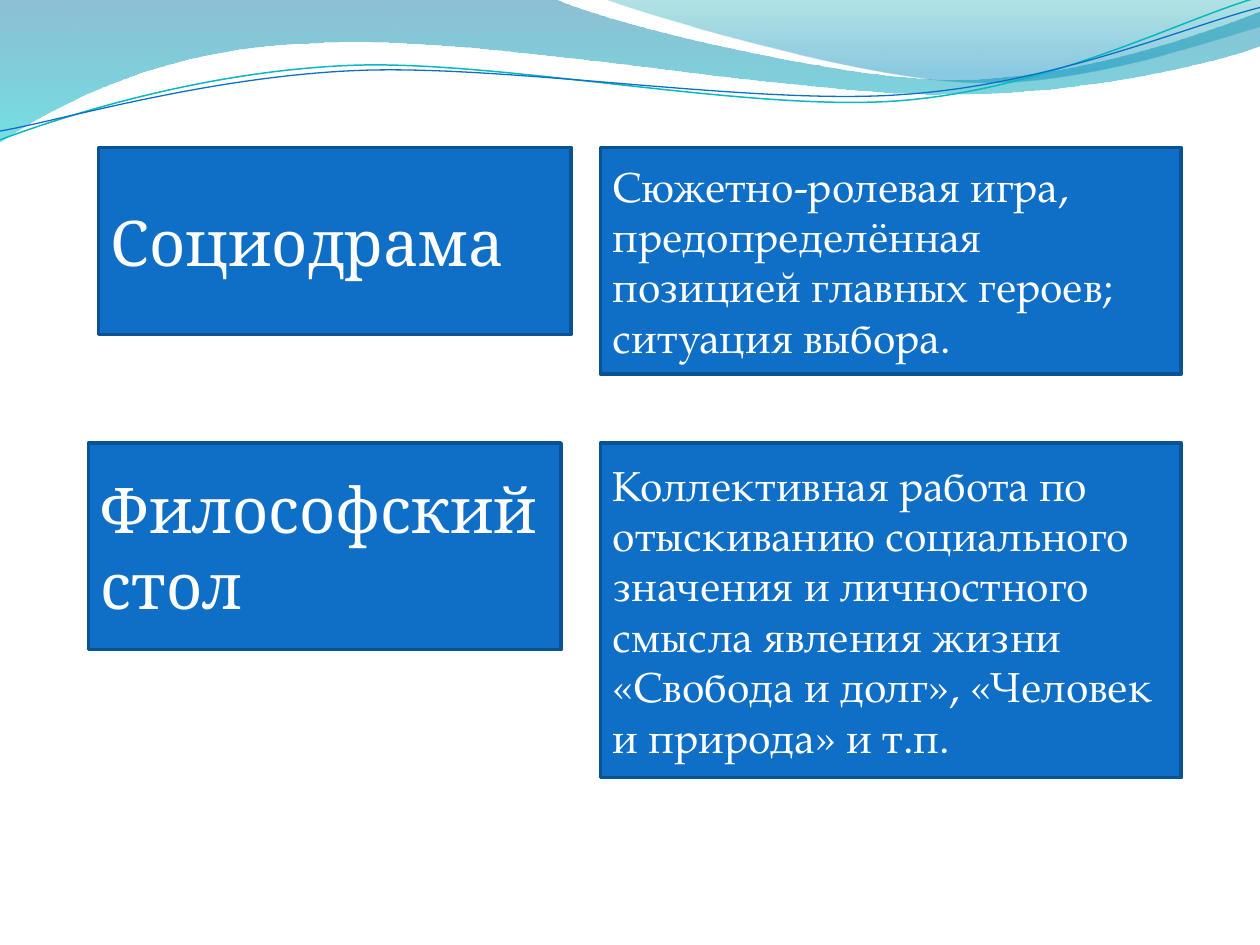
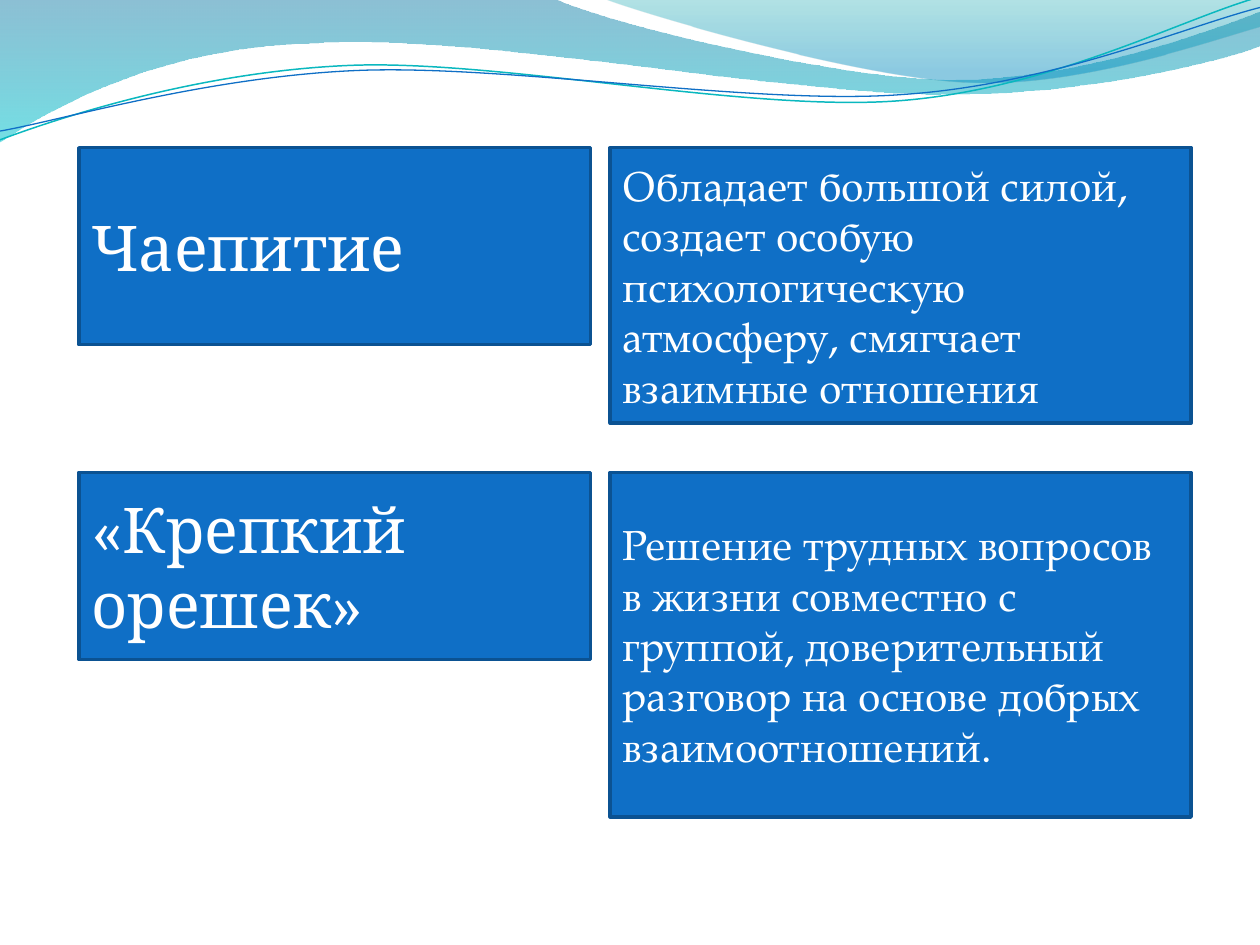
import math
from dataclasses import dataclass

from lxml import etree
from pptx import Presentation
from pptx.dml.color import RGBColor
from pptx.enum.shapes import MSO_SHAPE
from pptx.enum.text import MSO_ANCHOR, PP_ALIGN
from pptx.oxml.ns import qn
from pptx.util import Pt

RECT = MSO_SHAPE.RECTANGLE
MIDDLE = MSO_ANCHOR.MIDDLE
LEFT = PP_ALIGN.LEFT


@dataclass(frozen=True)
class Theme:
    card_fill: str = "0F6FC6"
    card_line: str = "0B5292"
    text: str = "FFFFFF"
    teal_line: str = "0AB8BF"
    blue_line: str = "0F6FC6"
    # gradient stops: position, colour, opacity in percent
    wide_wave: tuple = ((0, "0074A1", 45), (1, "00C6CF", 55))
    right_wave: tuple = ((0, "00A1A9", 30), (0.8, "008BBF", 45))
    term: tuple = ("Cambria", 36)
    body: tuple = ("TeX Gyre Pagella", 24)


theme = Theme()
rgb = RGBColor.from_string


def add_curve(shapes, start, parts, closed):
    """Draw a path; a part is a line end (x, y) or six Bezier coordinates."""
    points = [(Pt(x), Pt(y)) for part in parts
              for x, y in zip(part[::2], part[1::2])]
    builder = shapes.build_freeform(Pt(start[0]), Pt(start[1]))
    builder.add_line_segments(points, close=closed)
    sp = builder.convert_to_shape()
    sp.shadow.inherit = False
    # Join each triple of line segments into one Bezier segment
    segments = iter(list(sp.element.iter(qn("a:lnTo"))))
    for part in parts:
        segment = next(segments)
        if len(part) == 6:
            curve = etree.Element(qn("a:cubicBezTo"))
            segment.addprevious(curve)
            for old in (segment, next(segments), next(segments)):
                curve.append(old[0])
                old.getparent().remove(old)
    return sp


def add_card(shapes, box, text, style):
    sp = shapes.add_shape(RECT, *[Pt(v) for v in box])
    sp.shadow.inherit = False
    sp.fill.solid()
    sp.fill.fore_color.rgb = rgb(theme.card_fill)
    sp.line.color.rgb = rgb(theme.card_line)
    sp.line.width = Pt(2)
    tf = sp.text_frame
    tf.word_wrap = True
    tf.vertical_anchor = MIDDLE
    tf.text = text
    p = tf.paragraphs[0]
    p.alignment = LEFT
    r = p.runs[0]
    r.font.name = style[0]
    r.font.size = Pt(style[1])
    r.font.color.rgb = rgb(theme.text)


prs = Presentation()
prs.slide_width, prs.slide_height = Pt(720), Pt(540)
blank = prs.slide_layouts[6]
slides = [prs.slides.add_slide(blank) for _ in range(2)]

# Waves: start, parts, gradient stops
waves = [
    ((0, 0), [(316.8, -0.7),
              (342.7, 12.2, 478.1, 45.4, 545.8, 45.4),
              (614.2, 45.4, 689.8, 18.7, 720, 6.5),
              (720.7, 25.9),
              (707.8, 31.7, 626.4, 54.7, 537.1, 54),
              (447.8, 54, 275, 20.2, 185, 24.5),
              (92.9, 25.9, 33.1, 59.8, -0.7, 81.4),
              (0, 0)], theme.wide_wave),
    ((344.9, -0.7), [(366.5, 7.9, 491, 44.6, 553.7, 46.8),
                     (616.3, 49.7, 691.9, 23, 720, 15.1),
                     (720, 0),
                     (344.9, -0.7)], theme.right_wave),
]
# Thin lines: centre, points as seen on the slide, colour, width
tilt = -2.7
wave_lines = [
    ((359.3, 41.4), [(0, 79.9),
                     (34.6, 67), (113.8, 41), (199.4, 37.4),
                     (284.4, 33.8), (427, 64.1), (513.4, 57.6),
                     (599.8, 51.1), (675.4, 10.8), (718.6, -1.4)],
     theme.teal_line, 0.85),
    ((359.6, 42.5), [(0, 74.9),
                     (33.8, 69.1), (118.1, 43.9), (203.8, 40.3),
                     (290.2, 36.7), (432.7, 60.5), (516.2, 54),
                     (601.9, 48.2), (677.5, 15.1), (720, 4.3)],
     theme.blue_line, 0.75),
]

shapes = slides[0].shapes
band = []
for start, parts, stops in waves:
    sp = add_curve(shapes, start, parts, True)
    sp.line.fill.background()
    sp.fill.gradient()
    sp.fill.gradient_angle = 270
    for stop, (position, color, _) in zip(sp.fill.gradient_stops, stops):
        stop.position = position
        stop.color.rgb = rgb(color)
    for clr, (_, _, opacity) in zip(sp.element.iter(qn("a:srgbClr")), stops):
        etree.SubElement(clr, qn("a:alpha")).set("val", str(opacity * 1000))
    band.append(sp)

lines = []
cos, sin = math.cos(math.radians(tilt)), math.sin(math.radians(tilt))
for (cx, cy), points, color, width in wave_lines:
    # Level the points, then tilt the whole shape
    level = [(cx + (x - cx) * cos + (y - cy) * sin,
              cy - (x - cx) * sin + (y - cy) * cos) for x, y in points]
    parts = [sum(level[i:i + 3], ()) for i in range(1, len(level), 3)]
    sp = add_curve(shapes, level[0], parts, False)
    sp.rotation = tilt
    sp.fill.background()
    sp.line.color.rgb = rgb(color)
    sp.line.width = Pt(width)
    lines.append(sp)
band.append(shapes.add_group_shape(lines))

# The band belongs to the master, so every slide shows it
for sp in band:
    prs.slide_master.shapes.element.append(sp.element)
ids = prs.slide_master.shapes.element.iter(qn("p:cNvPr"))
for number, c_nv_pr in enumerate(ids, 1):
    c_nv_pr.set("id", str(number))

# Cards on a grid: left, top, width, height in grid units, text, style
grid = 45 / 8
cards = [
    [
        (10, 15, 48, 19, "Социодрама", theme.term),
        (61, 15, 59, 23,
         "Сюжетно-ролевая игра, предопределённая позицией главных героев; "
         "ситуация выбора.", theme.body),
        (9, 45, 48, 21, "Философский стол", theme.term),
        (61, 45, 59, 34,
         "Коллективная работа по отыскиванию социального значения и "
         "личностного смысла явления жизни «Свобода и долг», «Человек и "
         "природа» и т.п.", theme.body),
    ],
    [
        (8, 15, 52, 20, "Чаепитие", theme.term),
        (8, 48, 52, 19, "«Крепкий орешек»", theme.term),
        (62, 15, 59, 28,
         "Обладает большой силой, создает особую психологическую атмосферу, "
         "смягчает взаимные отношения", theme.body),
        (62, 48, 59, 35,
         "Решение трудных вопросов в жизни совместно с группой, "
         "доверительный разговор на основе добрых взаимоотношений.",
         theme.body),
    ],
]
for s, slide_cards in zip(slides, cards):
    for *box, text, style in slide_cards:
        add_card(s.shapes, [v * grid for v in box], text, style)

prs.save("out.pptx")
